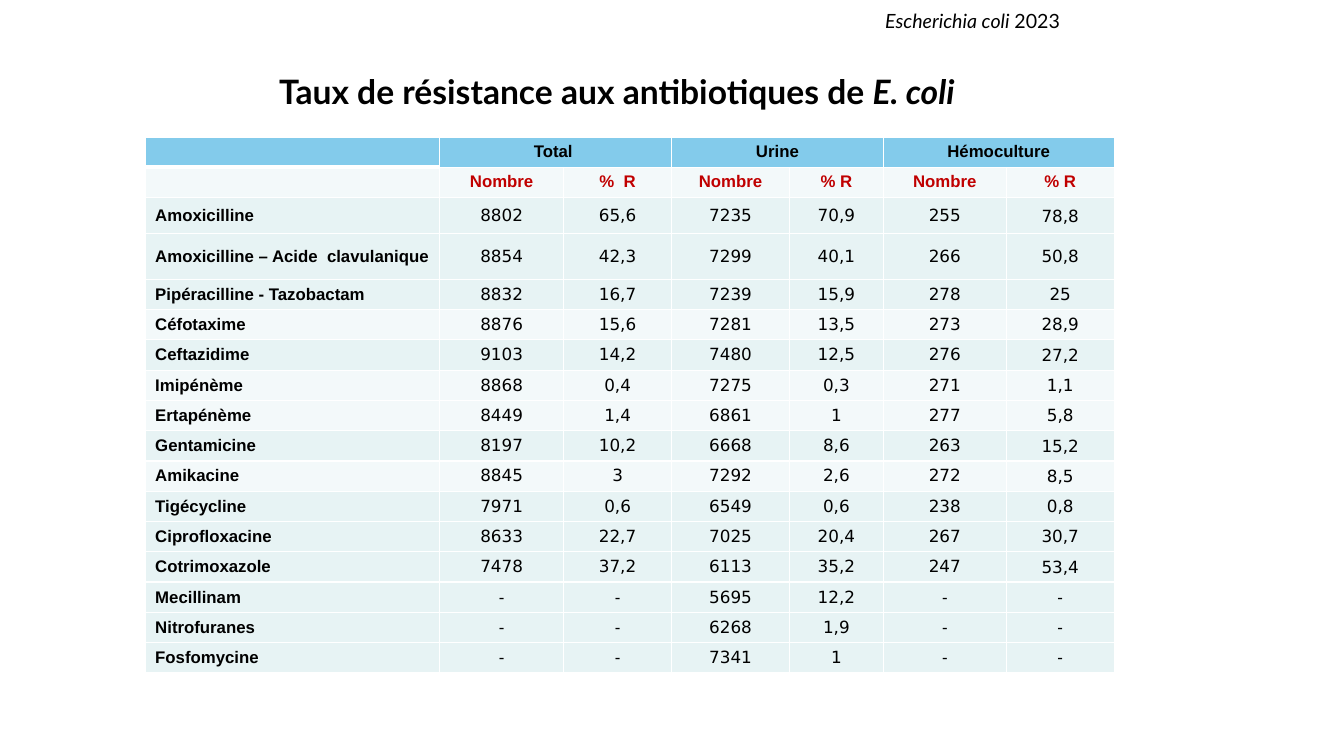
from lxml import etree
from pptx import Presentation
from pptx import util as u
from pptx.dml.color import RGBColor
from pptx.enum import text
from pptx.oxml.ns import qn

WIDTH, HEIGHT = u.Inches(13.33), u.Inches(7.5)
COLORS = {"black": "000000", "red": "C00000", "white": "FFFFFF",
          "header": "83CBEB", "light": "F3F9FA", "tint": "E7F3F4"}
COLUMN_SHARES = [21.91, 9.23, 8.03, 8.78, 6.98, 9.15, 8.03]
ROW_SHARE = 3.6
TALL_ROWS = {"Amoxicilline": 4.8, "Amoxicilline – Acide  clavulanique": 6}
LIGHT_ROWS = {"Céfotaxime", "Imipénème", "Ertapénème", "Amikacine"}
GROUPS = ["Total ", "Urine", "Hémoculture"]
MEASURES = ["Nombre", "%  R", "Nombre", "% R", "Nombre", "% R"]
RESISTANCE = [
    ("Amoxicilline", "8802", "65,6", "7235", "70,9", "255", "78,8"),
    ("Amoxicilline – Acide  clavulanique", "8854", "42,3", "7299", "40,1", "266", "50,8"),
    ("Pipéracilline - Tazobactam", "8832", "16,7", "7239", "15,9", "278", "25"),
    ("Céfotaxime", "8876", "15,6", "7281", "13,5", "273", "28,9"),
    ("Ceftazidime", "9103", "14,2", "7480", "12,5", "276", "27,2"),
    ("Imipénème", "8868", "0,4", "7275", "0,3", "271", "1,1"),
    ("Ertapénème", "8449", "1,4", "6861", "1", "277", "5,8"),
    ("Gentamicine", "8197", "10,2", "6668", "8,6", "263", "15,2"),
    ("Amikacine", "8845", "3", "7292", "2,6", "272", "8,5"),
    ("Tigécycline", "7971", "0,6", "6549", "0,6", "238", "0,8"),
    ("Ciprofloxacine", "8633", "22,7", "7025", "20,4", "267", "30,7"),
    ("Cotrimoxazole", "7478", "37,2", "6113", "35,2", "247", "53,4"),
    ("Mecillinam", "-", "-", "5695", "12,2", "-", "-"),
    ("Nitrofuranes", "-", "-", "6268", "1,9", "-", "-"),
    ("Fosfomycine", "-", "-", "7341", "1", "-", "-"),
]


def across(percent):
    return int(WIDTH * percent / 100)


def down(percent):
    return int(HEIGHT * percent / 100)


def style_span(span, font, size, color="black", bold=False, italic=False):
    span.font.name = font
    span.font.size = u.Pt(size)
    span.font.bold = bold
    span.font.italic = italic
    span.font.color.rgb = RGBColor.from_string(COLORS[color])


def add_text(page, left, top, width, height, pieces, size, bold=False, wrap=True):
    box = page.shapes.add_textbox(across(left), down(top), across(width), down(height))
    box.text_frame.word_wrap = wrap
    para = box.text_frame.paragraphs[0]
    for wording, italic in pieces:
        span = para.add_run()
        span.text = wording
        style_span(span, "Lato", size, bold=bold, italic=italic)
    return box


def set_borders(cell, **widths):
    properties = cell._tc.get_or_add_tcPr()
    for side in ("L", "R", "T", "B"):
        line = etree.SubElement(properties, qn(f"a:ln{side}"),
                                w=str(u.Pt(widths.get(side, 1))))
        fill = etree.SubElement(line, qn("a:solidFill"))
        etree.SubElement(fill, qn("a:srgbClr"), val=COLORS["white"])


def fill_cell(cell, wording, fill, color="black", font="Arial", bold=True,
              centered=True, middle=True, insets=(0.1, 0.05, 0.1, 0.05), **borders):
    set_borders(cell, **borders)
    cell.fill.solid()
    cell.fill.fore_color.rgb = RGBColor.from_string(COLORS[fill])
    cell.margin_left, cell.margin_top, cell.margin_right, cell.margin_bottom = map(u.Inches, insets)
    cell.vertical_anchor = text.MSO_ANCHOR.MIDDLE if middle else text.MSO_ANCHOR.TOP
    para = cell.text_frame.paragraphs[0]
    para.alignment = text.PP_ALIGN.CENTER if centered else text.PP_ALIGN.LEFT
    if wording:
        para.text = wording
        style_span(para.runs[0], font, 12, color, bold)
    else:
        etree.SubElement(para._p, qn("a:endParaRPr"), sz="1200")


def fill_headers(table):
    fill_cell(table.cell(0, 0), "", "header", B=3)
    fill_cell(table.cell(1, 0), "", "light", T=3)
    for index, group in enumerate(GROUPS):
        first, last = table.cell(0, 2 * index + 1), table.cell(0, 2 * index + 2)
        first.merge(last)
        fill_cell(first, group, "header", middle=False)
        fill_cell(last, "", "header")
    for column, measure in enumerate(MEASURES, 1):
        fill_cell(table.cell(1, column), measure, "light", "red", middle=False)


def fill_antibiotic(table, row, values):
    name, *figures = values
    fill = "light" if name in LIGHT_ROWS else "tint"
    fill_cell(table.cell(row, 0), name, fill, centered=False)
    for column, figure in enumerate(figures, 1):
        if figure == "-":
            font, insets = "Arial", (0, 0, 0, 0)
        elif column == len(figures):
            font, insets = "DejaVu Sans", (0.01, 0.01, 0.01, 0)
        else:
            font, insets = "DejaVu Sans", (0.03, 0, 0.03, 0)
        fill_cell(table.cell(row, column), figure, fill, font=font, bold=False, insets=insets)


def add_resistance_table(page):
    heights = [ROW_SHARE] * 2 + [TALL_ROWS.get(values[0], ROW_SHARE) for values in RESISTANCE]
    table = page.shapes.add_table(len(heights), len(COLUMN_SHARES), across(10.8), down(18.13),
                                  across(sum(COLUMN_SHARES)), down(sum(heights))).table
    table.first_row = table.horz_banding = False
    for column, share in zip(table.columns, COLUMN_SHARES):
        column.width = across(share)
    for row, share in zip(table.rows, heights):
        row.height = down(share)
    fill_headers(table)
    for row, values in enumerate(RESISTANCE, 2):
        fill_antibiotic(table, row, values)


def main():
    deck = Presentation()
    deck.slide_width, deck.slide_height = WIDTH, HEIGHT
    page = deck.slides.add_slide(deck.slide_layouts[6])
    title = add_text(page, 20.03, 7.6, 75.02, 9.47,
                     [("Taux de résistance aux antibiotiques de ", False), ("E. coli", True)],
                     24, bold=True)
    title.text_frame.vertical_anchor = text.MSO_ANCHOR.MIDDLE
    title.text_frame.paragraphs[0].line_spacing = 0.9
    add_resistance_table(page)
    label = add_text(page, 65.12, 0.53, 18.9, 4.53,
                     [("Escherichia coli ", True), ("2023", False)], 14)
    label.text_frame.auto_size = text.MSO_AUTO_SIZE.SHAPE_TO_FIT_TEXT
    deck.save("out.pptx")


if __name__ == "__main__":
    main()
